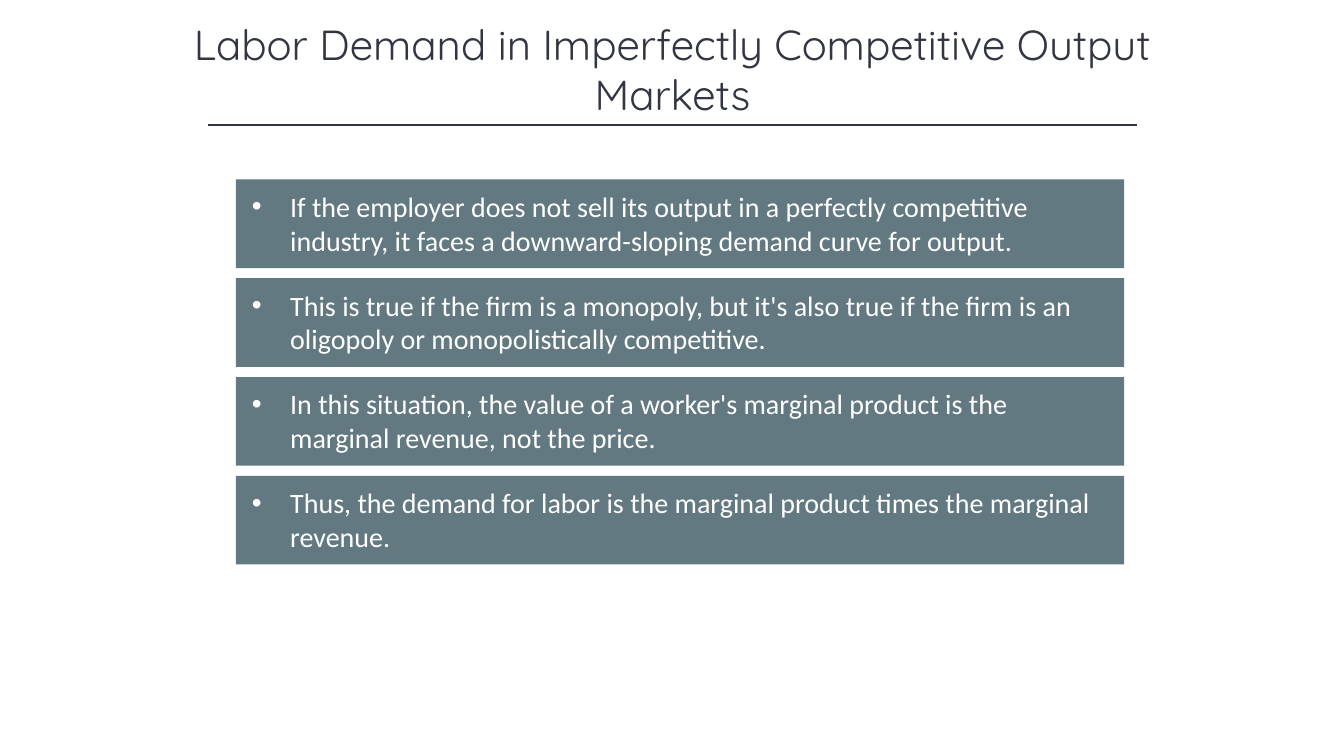
from dataclasses import dataclass

from lxml import etree
from pptx import Presentation
from pptx import util as u
from pptx.dml.color import RGBColor
from pptx.enum import shapes, text
from pptx.oxml.ns import qn


@dataclass(frozen=True)
class Theme:
    ink: RGBColor = RGBColor(0x32, 0x35, 0x42)
    panel: RGBColor = RGBColor(0x62, 0x79, 0x81)
    light: RGBColor = RGBColor(0xFF, 0xFF, 0xFF)
    title_font: str = "Quicksand"
    body_font: str = "Calibri"
    title_size: int = 30
    body_size: int = 20


class SlideBuilder:
    def __init__(self, slide, theme):
        self.slide = slide
        self.theme = theme

    def add_run(self, paragraph, words, font, size, color):
        run = paragraph.add_run()
        run.text = words
        run.font.name = font
        run.font.size = u.Pt(size)
        run.font.color.rgb = color

    def title(self, words, left, top, width, height):
        heading = self.slide.shapes.title
        heading.left, heading.top = u.Inches(left), u.Inches(top)
        heading.width, heading.height = u.Inches(width), u.Inches(height)
        frame = heading.text_frame
        frame.word_wrap = True
        frame.auto_size = text.MSO_AUTO_SIZE.SHAPE_TO_FIT_TEXT
        frame.vertical_anchor = text.MSO_ANCHOR.TOP
        paragraph = frame.paragraphs[0]
        paragraph.alignment = text.PP_ALIGN.CENTER
        self.add_run(paragraph, words, self.theme.title_font,
                     self.theme.title_size, self.theme.ink)

    def rule(self, left, right, y):
        underline = self.slide.shapes.add_connector(
            shapes.MSO_CONNECTOR.STRAIGHT,
            u.Inches(left), u.Inches(y), u.Inches(right), u.Inches(y))
        underline.line.color.rgb = self.theme.ink
        underline.line.width = u.Pt(1)
        etree.SubElement(underline._element.spPr, qn("a:effectLst"))

    def panel(self, group, left, top, width, height):
        box = group.shapes.add_shape(
            shapes.MSO_SHAPE.RECTANGLE,
            u.Inches(left), u.Inches(top), u.Inches(width), u.Inches(height))
        box.shadow.inherit = False
        box.fill.solid()
        box.fill.fore_color.rgb = self.theme.panel
        box.line.fill.background()
        return box

    def bullet_card(self, words, left, top):
        group = self.slide.shapes.add_group_shape()
        self.panel(group, left, top, 8.81, 0.88)
        statement = self.panel(group, left + 0.06, top + 0.05, 8.54, 0.77)
        frame = statement.text_frame
        frame.word_wrap = True
        frame.auto_size = text.MSO_AUTO_SIZE.SHAPE_TO_FIT_TEXT
        frame.vertical_anchor = text.MSO_ANCHOR.TOP
        paragraph = frame.paragraphs[0]
        paragraph.alignment = text.PP_ALIGN.LEFT
        self.add_run(paragraph, words, self.theme.body_font,
                     self.theme.body_size, self.theme.light)
        # Hanging bullet
        properties = paragraph._p.get_or_add_pPr()
        properties.set("marL", str(u.Inches(0.38)))
        properties.set("indent", str(-u.Inches(0.38)))
        etree.SubElement(properties, qn("a:buFont"), typeface="Arial")
        etree.SubElement(properties, qn("a:buChar"), char="•")


STATEMENTS = [
    "If the employer does not sell its output in a perfectly competitive "
    "industry, it faces a downward-sloping demand curve for output.",
    "This is true if the firm is a monopoly, but it's also true if the firm "
    "is an oligopoly or monopolistically competitive.",
    "In this situation, the value of a worker's marginal product is the "
    "marginal revenue, not the price.",
    "Thus, the demand for labor is the marginal product times the marginal "
    "revenue.",
]


def main():
    deck = Presentation()
    deck.slide_width, deck.slide_height = u.Inches(13.33), u.Inches(7.5)
    title_only = deck.slide_layouts[5]
    builder = SlideBuilder(deck.slides.add_slide(title_only), Theme())

    # Heading with underline
    builder.title("Labor Demand in Imperfectly Competitive Output Markets",
                  1.67, 0.13, 10, 1.11)
    builder.rule(2.06, 11.28, 1.24)

    # Evenly spaced statements
    for row, statement in enumerate(STATEMENTS):
        builder.bullet_card(statement, 2.34, 1.78 + 0.98 * row)

    deck.save("out.pptx")


if __name__ == "__main__":
    main()
